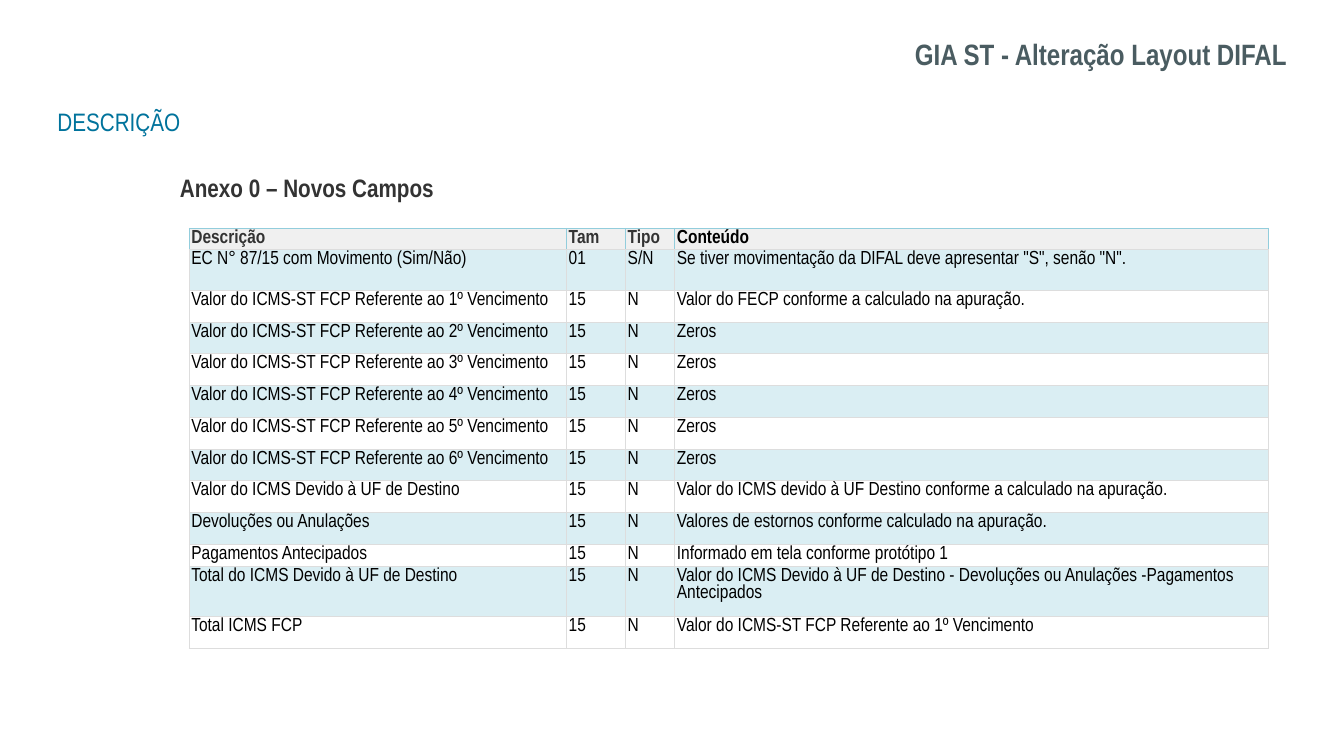
import dataclasses

import lxml.etree
import pptx
import pptx.dml.color
import pptx.enum.shapes
import pptx.enum.text
import pptx.oxml.ns
import pptx.util

Inches = pptx.util.Inches
Pt = pptx.util.Pt
qn = pptx.oxml.ns.qn
ALIGN = pptx.enum.text.PP_ALIGN
ANCHOR = pptx.enum.text.MSO_ANCHOR


@dataclasses.dataclass(frozen=True)
class Theme:
    font: str = "Arial Narrow"
    title: str = "4A5C61"
    section: str = "00739C"
    heading: str = "333333"
    text: str = "000000"
    white: str = "FFFFFF"
    header_fill: str = "F0F0F0"
    band_fill: str = "DAEEF3"
    grid: str = "DDDDDD"
    header_grid: str = "92CDDC"
    title_size: int = 28
    heading_size: int = 24
    table_size: int = 18


def rgb(color):
    return pptx.dml.color.RGBColor.from_string(color)


def write(tf, text, *, font, size, color, bold=False, align=ALIGN.LEFT):
    p = tf.paragraphs[0]
    p.alignment = align
    p.space_before = Pt(0)
    r = p.add_run()
    r.text = text
    r.font.name = font
    r.font.size = Pt(size)
    r.font.bold = bold
    r.font.color.rgb = rgb(color)


def set_border(cell, side, color):
    ln = lxml.etree.SubElement(cell._tc.get_or_add_tcPr(), qn(f"a:ln{side}"), w=str(Pt(0.75)))
    fill = lxml.etree.SubElement(ln, qn("a:solidFill"))
    lxml.etree.SubElement(fill, qn("a:srgbClr"), val=color)


class SlideBuilder:
    def __init__(self, prs, theme):
        self.theme = theme
        self.s = prs.slides.add_slide(prs.slide_layouts[1])

    def place(self, sp, box, anchor):
        sp.left, sp.top, sp.width, sp.height = (Inches(v) for v in box)
        tf = sp.text_frame
        tf.word_wrap = True
        tf.auto_size = pptx.enum.text.MSO_AUTO_SIZE.NONE
        tf.vertical_anchor = anchor
        return tf

    def title(self, text, box):
        t = self.theme
        tf = self.place(self.s.shapes.title, box, ANCHOR.MIDDLE)
        write(tf, text, font=t.font, size=t.title_size, color=t.title, bold=True, align=ALIGN.RIGHT)

    def section(self, text, box):
        t = self.theme
        tf = self.place(self.s.placeholders[1], box, ANCHOR.TOP)
        tf.margin_top = Inches(0.12)
        pPr = tf.paragraphs[0]._p.get_or_add_pPr()
        pPr.set("marL", "0")
        pPr.set("indent", "0")
        lxml.etree.SubElement(pPr, qn("a:buNone"))
        write(tf, text, font=t.font, size=t.heading_size, color=t.section)

    def heading(self, text, box):
        t = self.theme
        sp = self.s.shapes.add_shape(
            pptx.enum.shapes.MSO_SHAPE.RECTANGLE, *(Inches(v) for v in box))
        sp.shadow.inherit = False
        sp.fill.solid()
        sp.fill.fore_color.rgb = rgb(t.white)
        sp.line.fill.background()
        tf = self.place(sp, box, ANCHOR.MIDDLE)
        tf.margin_bottom = Inches(0.29)
        write(tf, text, font=t.font, size=t.heading_size, color=t.heading, bold=True)

    def cell(self, cell, text, fill, color, header):
        t = self.theme
        cell.margin_left = Inches(0.03)
        cell.margin_right = Inches(0.05 if header else 0.03)
        cell.margin_top = cell.margin_bottom = Inches(0.02)
        for side in "LRTB":
            set_border(cell, side, t.header_grid if header and side != "B" else t.grid)
        cell.fill.solid()
        cell.fill.fore_color.rgb = rgb(fill)
        write(cell.text_frame, text, font=t.font, size=t.table_size, color=color, bold=header)

    def table(self, rows, left, top, widths, heights):
        t = self.theme
        frame = self.s.shapes.add_table(
            len(rows), len(widths), Inches(left), Inches(top),
            Inches(sum(widths)), Inches(sum(heights)))
        table = frame.table
        table.first_row = table.horz_banding = False
        for column, width in zip(table.columns, widths):
            column.width = Inches(width)
        for i, (row, values, height) in enumerate(zip(table.rows, rows, heights)):
            row.height = Inches(height)
            header = i == 0
            fill = t.header_fill if header else t.band_fill if i % 2 else t.white
            for j, (cell, text) in enumerate(zip(row.cells, values)):
                color = t.heading if header and j < len(widths) - 1 else t.text
                self.cell(cell, text, fill, color, header)


def due_field(n):
    return f"Valor do ICMS-ST FCP Referente ao {n}º Vencimento"


def numeric(name, content):
    return name, "15", "N", content


def main():
    prs = pptx.Presentation()
    prs.slide_width, prs.slide_height = Inches(17.77), Inches(10)
    slide = SlideBuilder(prs, Theme())
    slide.title("GIA ST - Alteração Layout DIFAL", (3.63, 0.41, 13.48, 0.61))
    slide.section("DESCRIÇÃO", (0.66, 1.29, 3.68, 0.93))
    rows = [
        ("Descrição", "Tam", "Tipo", "Conteúdo"),
        ("EC N° 87/15 com Movimento (Sim/Não)", "01", "S/N",
         'Se tiver movimentação da DIFAL deve apresentar "S", senão "N".'),
        numeric(due_field(1), "Valor do FECP conforme a calculado na apuração."),
        *(numeric(due_field(n), "Zeros") for n in range(2, 7)),
        numeric("Valor do ICMS Devido à UF de Destino",
                "Valor do ICMS devido à UF Destino conforme a calculado na apuração."),
        numeric("Devoluções ou Anulações", "Valores de estornos conforme calculado na apuração."),
        numeric("Pagamentos Antecipados", "Informado em tela conforme protótipo 1"),
        numeric("Total do ICMS Devido à UF de Destino",
                "Valor do ICMS Devido à UF de Destino - Devoluções ou Anulações "
                "-Pagamentos Antecipados"),
        numeric("Total ICMS FCP", due_field(1)),
    ]
    heights = [0.28, 0.54] + [0.42] * 8 + [0.29, 0.67, 0.42]
    slide.table(rows, 2.5, 3.02, [4.99, 0.78, 0.65, 7.85], heights)
    slide.heading("Anexo 0 – Novos Campos", (2.28, 2.19, 3.88, 0.81))
    prs.save("out.pptx")


if __name__ == "__main__":
    main()
